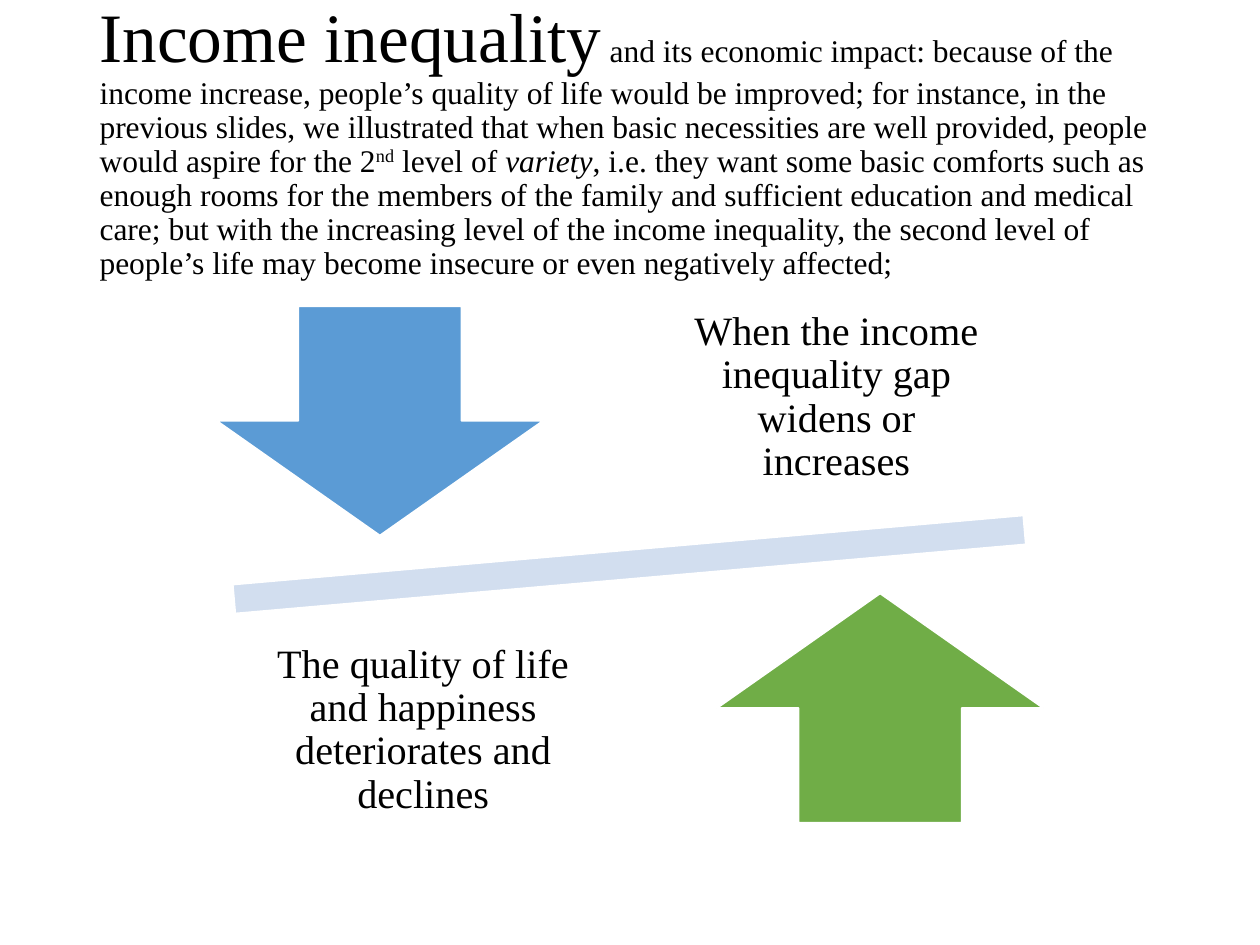
"""Build a slide on income inequality and quality of life with a tilted balance."""
from pptx import Presentation
from pptx.dml.color import RGBColor
from pptx.enum.shapes import MSO_SHAPE
from pptx.enum.text import MSO_ANCHOR, MSO_AUTO_SIZE, PP_ALIGN
from pptx.util import Inches, Pt

COLORS = {"text": "000000", "outline": "FFFFFF", "beam": "D2DEEF",
          "down": "5B9BD5", "up": "70AD47"}


def add_text(para, text, size=18, italic=False, superscript=False):
    span = para.add_run()
    span.text = text
    span.font.name = "Times New Roman"
    span.font.size = Pt(size)
    span.font.italic = italic
    span.font.color.rgb = RGBColor.from_string(COLORS["text"])
    if superscript:
        span.font._element.set("baseline", "30000")


deck = Presentation()
deck.slide_width, deck.slide_height = Inches(10), Inches(7.5)
page = deck.slides.add_slide(deck.slide_layouts[5])

title = page.shapes.title
title.left, title.top = Inches(0.69), Inches(0.4)
title.width, title.height = Inches(8.62), Inches(1.45)
title.text_frame.auto_size = MSO_AUTO_SIZE.NONE
title.text_frame.vertical_anchor = MSO_ANCHOR.MIDDLE
para = title.text_frame.paragraphs[0]
para.alignment = PP_ALIGN.LEFT
para.line_spacing = 0.9
add_text(para, "Income inequality", size=39.6)
add_text(para, " and its economic impact: because of the income increase, "
         "people’s quality of life would be improved; for instance, in the "
         "previous slides, we illustrated that when basic necessities are "
         "well provided, people would aspire for the 2")
add_text(para, "nd", superscript=True)
add_text(para, " level of ")
add_text(para, "variety", italic=True)
add_text(para, ", i.e. they want some basic comforts such as enough rooms for "
         "the members of the family and sufficient education and medical care; "
         "but with the increasing level of the income inequality, the second "
         "level of people’s life may become insecure or even negatively affected;")

balance = [
    (MSO_SHAPE.MATH_MINUS, "beam", 0.71, 3.99, 8.57, 0.98, -5),
    (MSO_SHAPE.DOWN_ARROW, "down", 1.72, 2.43, 2.59, 1.82, 0),
    (MSO_SHAPE.UP_ARROW, "up", 5.69, 4.71, 2.59, 1.82, 0),
]
for kind, color, left, top, width, height, angle in balance:
    shape = page.shapes.add_shape(kind, Inches(left), Inches(top),
                                  Inches(width), Inches(height))
    shape.rotation = angle
    shape.shadow.inherit = False
    shape.fill.solid()
    shape.fill.fore_color.rgb = RGBColor.from_string(COLORS[color])
    shape.line.color.rgb = RGBColor.from_string(COLORS["outline"])
    shape.line.width = Pt(1)

labels = [
    (5.26, 2.2, "When the income inequality gap widens or increases"),
    (1.98, 4.84, "The quality of life and happiness deteriorates and declines"),
]
for left, top, text in labels:
    box = page.shapes.add_textbox(Inches(left), Inches(top),
                                  Inches(2.76), Inches(1.91))
    frame = box.text_frame
    frame.word_wrap = True
    frame.vertical_anchor = MSO_ANCHOR.MIDDLE
    frame.margin_left = frame.margin_right = Inches(0.18)
    frame.margin_top = frame.margin_bottom = Inches(0.18)
    para = frame.paragraphs[0]
    para.alignment = PP_ALIGN.CENTER
    para.line_spacing = 0.9
    add_text(para, text, size=23)

deck.save("out.pptx")
